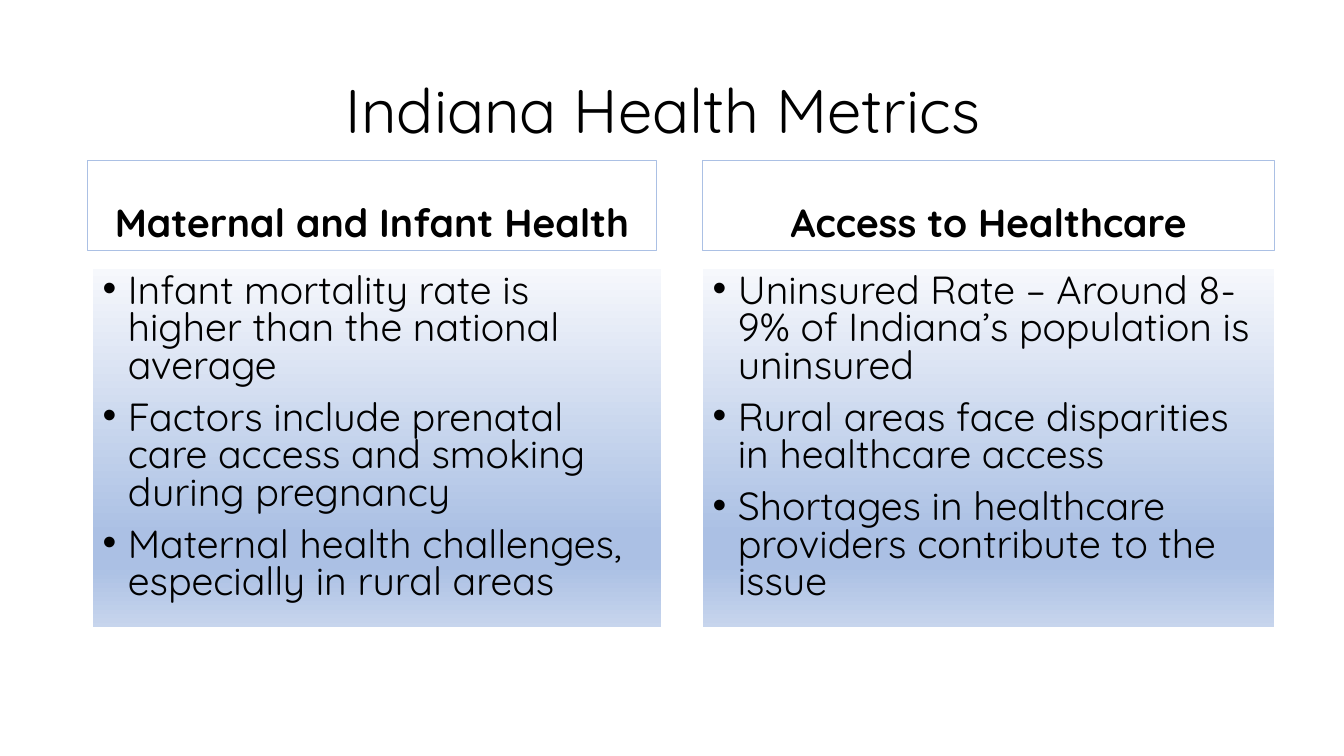
from dataclasses import dataclass

from lxml import etree
from pptx import Presentation
from pptx.dml.color import RGBColor
from pptx.enum.shapes import MSO_SHAPE
from pptx.enum.text import MSO_ANCHOR, PP_ALIGN
from pptx.oxml.ns import qn
from pptx.util import Inches, Pt

RECT = MSO_SHAPE.RECTANGLE
TOP, MIDDLE, BOTTOM = MSO_ANCHOR.TOP, MSO_ANCHOR.MIDDLE, MSO_ANCHOR.BOTTOM
LEFT, CENTER = PP_ALIGN.LEFT, PP_ALIGN.CENTER


@dataclass(frozen=True)
class Theme:
    font: str = "Quicksand"
    ink: str = "000000"
    edge: str = "ABC0E4"
    fade: tuple = ((0, "F6F8FC"), (74, "ABC0E4"), (83, "ABC0E4"), (100, "C7D5ED"))
    title: int = 44
    body: int = 28
    gap: int = 10


THEME = Theme()

COLUMNS = [
    (0.87, 0.92, 5.64, "Maternal and Infant Health", [
        "Infant mortality rate is higher than the national average",
        "Factors include prenatal care access and smoking during pregnancy",
        "Maternal health challenges, especially in rural areas",
    ]),
    (6.97, 6.97, 5.67, "Access to Healthcare", [
        "Uninsured Rate – Around 8-9% of Indiana’s population is uninsured",
        "Rural areas face disparities in healthcare access",
        "Shortages in healthcare providers contribute to the issue",
    ]),
]


def add_bullet(para):
    props = para._p.get_or_add_pPr()
    props.set("marL", str(Inches(0.25)))
    props.set("indent", str(-Inches(0.25)))
    etree.SubElement(props, qn("a:buFont"), typeface="Arial")
    etree.SubElement(props, qn("a:buChar"), char="•")


def write(shape, lines, size=THEME.body, bold=False, align=CENTER,
          anchor=MIDDLE, leading=0.9, bullet=False):
    frame = shape.text_frame
    frame.word_wrap = True
    frame.vertical_anchor = anchor
    for i, line in enumerate(lines):
        para = frame.add_paragraph() if i else frame.paragraphs[0]
        if bullet:
            add_bullet(para)
        para.alignment = align
        para.line_spacing = leading
        para.space_before = Pt(THEME.gap if i else 0)
        run = para.add_run()
        run.text = line
        run.font.name = THEME.font
        run.font.size = Pt(size)
        run.font.bold = bold
        run.font.color.rgb = RGBColor.from_string(THEME.ink)


def add_rect(slide, box):
    shape = slide.shapes.add_shape(RECT, *map(Inches, box))
    shape.shadow.inherit = False
    return shape


def fill_fade(shape):
    """Fill the shape from top to bottom with the theme's colour stops."""
    shape.fill.gradient()
    shape.fill.gradient_angle = 270
    stops = shape._element.spPr.find(qn("a:gradFill")).find(qn("a:gsLst"))
    for stop in list(stops):
        stops.remove(stop)
    for place, color in THEME.fade:
        stop = etree.SubElement(stops, qn("a:gs"), pos=str(place * 1000))
        etree.SubElement(stop, qn("a:srgbClr"), val=color)


def add_title(slide, box, text):
    shape = slide.shapes.add_textbox(*map(Inches, box))
    write(shape, [text], size=THEME.title)
    shape.text_frame.margin_right = Inches(0.28)


def add_head(slide, box, text):
    shape = add_rect(slide, box)
    shape.fill.background()
    shape.line.color.rgb = RGBColor.from_string(THEME.edge)
    shape.line.width = Pt(0.75)
    write(shape, [text], bold=True, anchor=BOTTOM)


def add_panel(slide, box, points):
    shape = add_rect(slide, box)
    fill_fade(shape)
    shape.line.fill.background()
    write(shape, points, align=LEFT, anchor=TOP, leading=0.8, bullet=True)


def main():
    deck = Presentation()
    deck.slide_width, deck.slide_height = Inches(13.33), Inches(7.5)
    slide = deck.slides.add_slide(deck.slide_layouts[6])
    add_title(slide, (0.92, 0.4, 11.5, 1.45), "Indiana Health Metrics")
    for head_x, panel_x, width, head, points in COLUMNS:
        add_head(slide, (head_x, 1.59, width, 0.9), head)
        add_panel(slide, (panel_x, 2.67, width, 3.55), points)
    deck.save("out.pptx")


if __name__ == "__main__":
    main()
